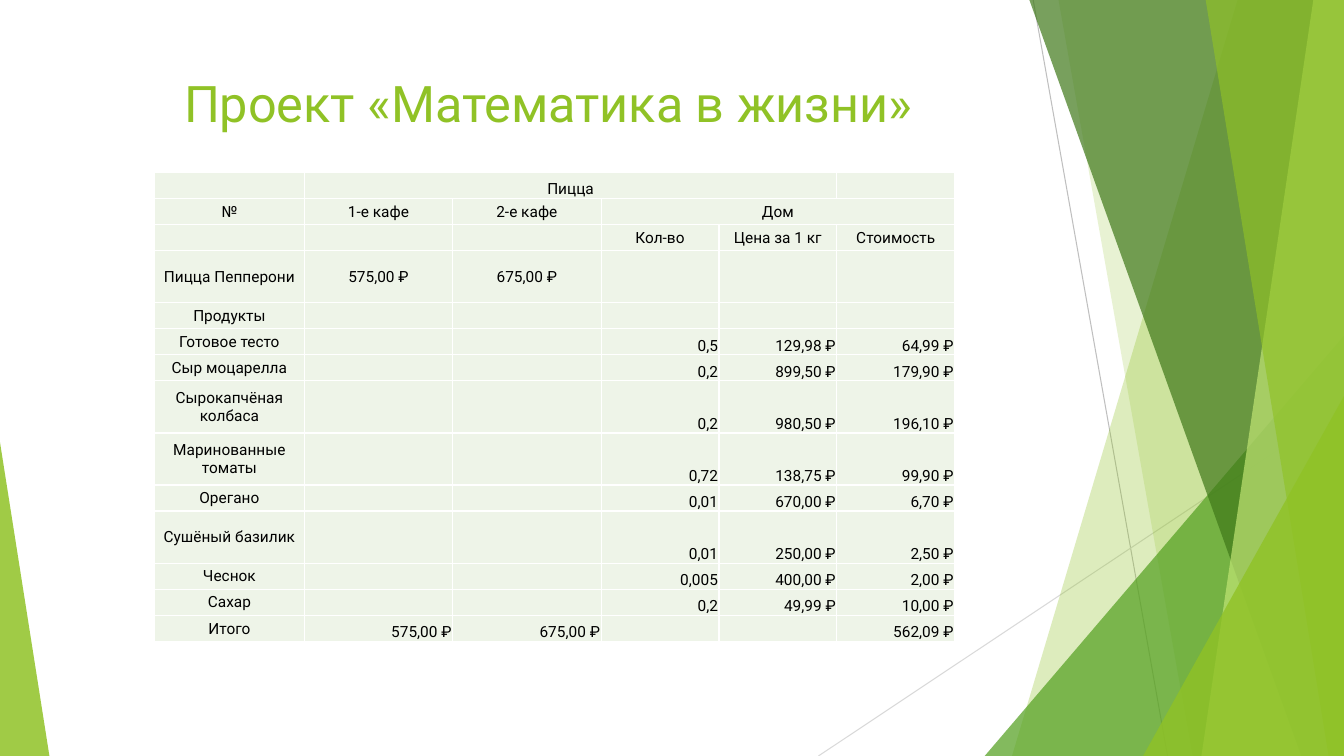
from dataclasses import dataclass

import pptx
import pptx.dml.color
import pptx.enum.shapes
import pptx.enum.text
import pptx.oxml
import pptx.oxml.ns
import pptx.util
from lxml import etree

Pt = pptx.util.Pt
ALIGN = pptx.enum.text.PP_ALIGN
ANCHOR = pptx.enum.text.MSO_ANCHOR
WIDTH, HEIGHT = 960, 540
FONT = "Roboto"
GREEN, CELL_FILL, WHITE, BLACK = "90C226", "EEF4E8", "FFFFFF", "000000"


@dataclass
class Ray:
    start: tuple[float, float]
    end: tuple[float, float]
    color: str


@dataclass
class Facet:
    """A slanted band that reaches the right edge of the slide."""
    top_x: float
    bottom_x: float
    color: str
    opacity: int


@dataclass
class Wedge:
    """A right-angled triangle standing on the bottom edge."""
    left: float
    top: float
    width: float
    apex: float
    color: str
    opacity: int


RAYS = [
    Ray((738, 0), (834, HEIGHT), "BFBFBF"),
    Ray((WIDTH, 290), (584.6, HEIGHT), "D9D9D9"),
]
DECOR = [
    Facet(884.2, 722.9, GREEN, 30),
    Facet(756, 851.8, GREEN, 20),
    Wedge(703.4, 239.8, 256.6, 1, "54A021", 72),
    Facet(735.1, 929.5, "3F7819", 70),
    Facet(938.2, 858.2, "C0E474", 70),
    Facet(861.1, 949, GREEN, 65),
    Wedge(816.5, 283, 143.5, 1, GREEN, 80),
    Wedge(0, 316, 35.3, 0, GREEN, 85),
]

# Table content: each row is padded with empty cells on the right
COSTS = [
    ["", "Пицца"],
    ["№", "1-е кафе", "2-е кафе", "Дом"],
    ["", "", "", "Кол-во", "Цена за 1 кг", "Стоимость"],
    ["Пицца Пепперони", "575,00 ₽", "675,00 ₽"],
    ["Продукты"],
    ["Готовое тесто", "", "", "0,5", "129,98 ₽", "64,99 ₽"],
    ["Сыр моцарелла", "", "", "0,2", "899,50 ₽", "179,90 ₽"],
    ["Сырокапчёная колбаса", "", "", "0,2", "980,50 ₽", "196,10 ₽"],
    ["Маринованные томаты", "", "", "0,72", "138,75 ₽", "99,90 ₽"],
    ["Орегано", "", "", "0,01", "670,00 ₽", "6,70 ₽"],
    ["Сушёный базилик", "", "", "0,01", "250,00 ₽", "2,50 ₽"],
    ["Чеснок", "", "", "0,005", "400,00 ₽", "2,00 ₽"],
    ["Сахар", "", "", "0,2", "49,99 ₽", "10,00 ₽"],
    ["Итого", "575,00 ₽", "675,00 ₽", "", "", "562,09 ₽"],
]
COLUMN_WIDTHS = [107, 106, 106, 84.2, 84.2, 84.2]
ROW_HEIGHT = 18.6
DOUBLE_ROWS = {3, 7, 8, 10}
FIRST_PRODUCT_ROW = 5
MERGES = [((0, 1), (0, 4)), ((1, 3), (1, 5))]


def rgb(color: str) -> pptx.dml.color.RGBColor:
    return pptx.dml.color.RGBColor.from_string(color)


def write(frame, text: str, *, size: float, color: str, align=ALIGN.CENTER) -> None:
    paragraph = frame.paragraphs[0]
    paragraph.alignment = align
    if not text:
        # An empty cell still needs a small font, or its row would grow
        end = etree.SubElement(paragraph._p, pptx.oxml.ns.qn("a:endParaRPr"))
        end.set("sz", str(int(size * 100)))
        return
    run = paragraph.add_run()
    run.text = text
    run.font.name = FONT
    run.font.size = Pt(size)
    run.font.color.rgb = rgb(color)


def paint(shape, color: str, opacity: int) -> None:
    shape.shadow.inherit = False
    shape.line.fill.background()
    shape.fill.solid()
    shape.fill.fore_color.rgb = rgb(color)
    tint = shape.fill._xPr.find(".//" + pptx.oxml.ns.qn("a:srgbClr"))
    etree.SubElement(tint, pptx.oxml.ns.qn("a:alpha")).set("val", str(opacity * 1000))


def draw_ray(slide, ray: Ray) -> None:
    line = slide.shapes.add_connector(
        pptx.enum.shapes.MSO_CONNECTOR.STRAIGHT,
        *(Pt(value) for value in ray.start + ray.end))
    line.line.color.rgb = rgb(ray.color)
    line.line.width = Pt(0.75)
    etree.SubElement(line._element.spPr, pptx.oxml.ns.qn("a:effectLst"))


def draw_facet(slide, facet: Facet) -> None:
    top = Pt(-0.6)
    outline = slide.shapes.build_freeform(Pt(facet.top_x), top)
    outline.add_line_segments([
        (Pt(WIDTH), top), (Pt(WIDTH), Pt(HEIGHT)), (Pt(facet.bottom_x), Pt(HEIGHT))])
    paint(outline.convert_to_shape(), facet.color, facet.opacity)


def draw_wedge(slide, wedge: Wedge) -> None:
    triangle = slide.shapes.add_shape(
        pptx.enum.shapes.MSO_SHAPE.ISOSCELES_TRIANGLE,
        Pt(wedge.left), Pt(wedge.top), Pt(wedge.width), Pt(HEIGHT - wedge.top))
    triangle.adjustments[0] = wedge.apex
    paint(triangle, wedge.color, wedge.opacity)


def add_borders(cell) -> None:
    properties = cell._tc.get_or_add_tcPr()
    for index, side in enumerate(("lnL", "lnR", "lnT", "lnB")):
        properties.insert(index, pptx.oxml.parse_xml(
            f'<a:{side} {pptx.oxml.ns.nsdecls("a")} w="{Pt(1)}"><a:solidFill>'
            f'<a:srgbClr val="{WHITE}"/></a:solidFill></a:{side}>'))


def fill_cell(cell, row: int, column: int, text: str) -> None:
    is_amount = row >= FIRST_PRODUCT_ROW and column > 0
    cell.margin_left = cell.margin_right = cell.margin_top = Pt(0.72)
    cell.margin_bottom = Pt(0)
    cell.vertical_anchor = ANCHOR.BOTTOM if is_amount or row == 0 else ANCHOR.MIDDLE
    cell.fill.solid()
    cell.fill.fore_color.rgb = rgb(CELL_FILL)
    add_borders(cell)
    write(cell.text_frame, text, size=11, color=BLACK,
          align=ALIGN.RIGHT if is_amount else ALIGN.CENTER)


def draw_costs(slide) -> None:
    heights = [ROW_HEIGHT * (2 if row in DOUBLE_ROWS else 1) for row in range(len(COSTS))]
    costs = slide.shapes.add_table(
        len(COSTS), len(COLUMN_WIDTHS), Pt(110.4), Pt(123.3),
        Pt(sum(COLUMN_WIDTHS)), Pt(sum(heights))).table
    costs.first_row = costs.horz_banding = False
    for column, width in enumerate(COLUMN_WIDTHS):
        costs.columns[column].width = Pt(width)
    for row, (height, texts) in enumerate(zip(heights, COSTS)):
        costs.rows[row].height = Pt(height)
        for column in range(len(COLUMN_WIDTHS)):
            text = texts[column] if column < len(texts) else ""
            fill_cell(costs.cell(row, column), row, column, text)
    for first, last in MERGES:
        costs.cell(*first).merge(costs.cell(*last))


def main() -> None:
    deck = pptx.Presentation()
    deck.slide_width, deck.slide_height = Pt(WIDTH), Pt(HEIGHT)
    slide = deck.slides.add_slide(deck.slide_layouts[6])

    # Green decoration
    for ray in RAYS:
        draw_ray(slide, ray)
    for part in DECOR:
        if isinstance(part, Facet):
            draw_facet(slide, part)
        else:
            draw_wedge(slide, part)

    # Heading
    heading = slide.shapes.add_textbox(Pt(53.3), Pt(48.2), Pt(676.8), Pt(103.7)).text_frame
    heading.word_wrap = True
    write(heading, "Проект «Математика в жизни»", size=36, color=GREEN)

    # Cost comparison
    draw_costs(slide)
    deck.save("out.pptx")


if __name__ == "__main__":
    main()
